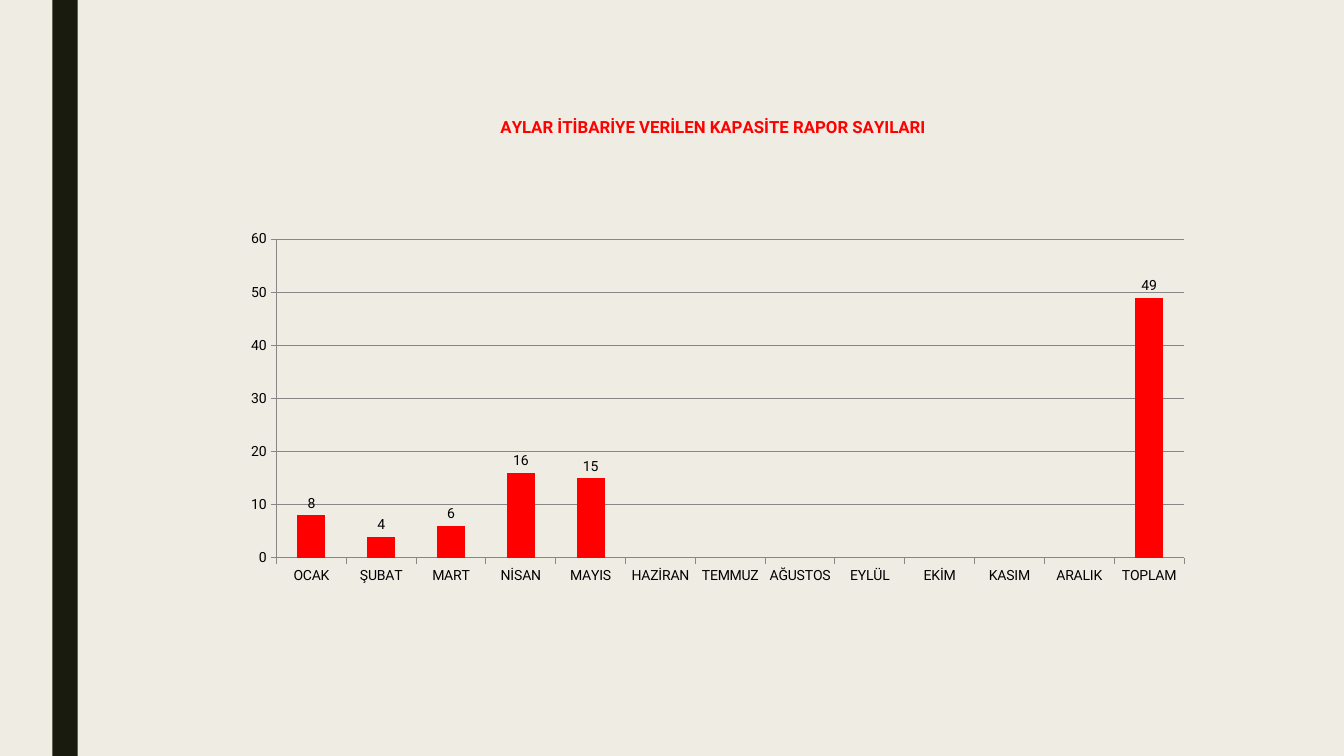
from lxml import etree
from pptx import Presentation
from pptx import util as u
from pptx.chart.data import CategoryChartData
from pptx.dml.color import RGBColor
from pptx.enum import chart as ch, shapes
from pptx.oxml.ns import qn

MONTHS = ["OCAK", "ŞUBAT", "MART", "NİSAN", "MAYIS", "HAZİRAN", "TEMMUZ",
          "AĞUSTOS", "EYLÜL", "EKİM", "KASIM", "ARALIK"]
REPORTS = [8, 4, 6, 16, 15] + [None] * 7
TITLE = "AYLAR İTİBARİYE VERİLEN KAPASİTE RAPOR SAYILARI"


def rgb(value):
    return RGBColor.from_string(value)


def style_font(font, size, color, name="Roboto", bold=False):
    font.name = name
    font.size = u.Pt(size)
    font.bold = bold
    font.color.rgb = rgb(color)


def add_text(p, content, **fmt):
    r = p.add_run()
    r.text = content
    style_font(r.font, **fmt)


def set_layout(parent, **values):
    layout = parent.find(qn("c:layout"))
    if layout is None:
        layout = etree.Element(qn("c:layout"))
        parent.insert(0, layout)
    manual = etree.SubElement(layout, qn("c:manualLayout"))
    for tag, value in values.items():
        etree.SubElement(manual, qn(f"c:{tag}")).set("val", str(value))


class Deck:
    black, red, gray = "000000", "FF0000", "878787"
    background, band = "EFEDE3", "191B0E"

    def __init__(self, prs):
        self.s = prs.slides.add_slide(prs.slide_layouts[6])
        fill = self.s.background.fill
        fill.solid()
        fill.fore_color.rgb = rgb(self.background)

    def add_band(self, x, y, w, h):
        sp = self.s.shapes.add_shape(shapes.MSO_SHAPE.RECTANGLE, *map(u.Inches, (x, y, w, h)))
        sp.shadow.inherit = False
        sp.fill.solid()
        sp.fill.fore_color.rgb = rgb(self.band)
        sp.line.fill.background()

    def add_columns(self, title, categories, values, x, y, w, h):
        data = CategoryChartData()
        data.categories = categories
        data.add_series("Series 1", values)
        chart = self.s.shapes.add_chart(
            ch.XL_CHART_TYPE.COLUMN_CLUSTERED, *map(u.Inches, (x, y, w, h)), data).chart
        style_font(chart.font, size=10, color=self.black)
        chart.has_legend = False
        self.format_title(chart, title)
        self.format_axes(chart)
        self.format_plot(chart)

    def format_title(self, chart, title):
        tf = chart.chart_title.text_frame
        add_text(tf.paragraphs[0], title, size=12, color=self.red, bold=True)
        set_layout(chart.element.find(".//" + qn("c:title")),
                   xMode="edge", yMode="edge", x=0.28, y=0.03)

    def format_axes(self, chart):
        values = chart.value_axis
        values.minimum_scale, values.maximum_scale, values.major_unit = 0, 60, 10
        values.has_major_gridlines = True
        for axis in (chart.category_axis, values):
            axis.major_tick_mark = ch.XL_TICK_MARK.OUTSIDE
            axis.minor_tick_mark = ch.XL_TICK_MARK.NONE
        for part in (chart.category_axis, values, values.major_gridlines):
            part.format.line.color.rgb = rgb(self.gray)
            part.format.line.width = u.Pt(0.75)

    def format_plot(self, chart):
        plot = chart.plots[0]
        plot.gap_width = 150
        plot.vary_by_categories = False
        plot.has_data_labels = True
        labels = plot.data_labels
        labels.show_value = True
        labels.position = ch.XL_LABEL_POSITION.OUTSIDE_END
        style_font(labels.font, size=10, color=self.black)
        fill = plot.series[0].format.fill
        fill.solid()
        fill.fore_color.rgb = rgb(self.red)
        set_layout(chart.element.find(".//" + qn("c:plotArea")), layoutTarget="inner",
                   xMode="edge", yMode="edge", x=0.058, y=0.243, w=0.912, h=0.536)


def main():
    prs = Presentation()
    prs.slide_width, prs.slide_height = u.Inches(13.33), u.Inches(7.5)
    deck = Deck(prs)
    deck.add_band(0.52, 0, 0.25, 7.5)
    deck.add_columns(TITLE, MONTHS + ["TOPLAM"], REPORTS + [sum(filter(None, REPORTS))],
                     2.17, 0.94, 9.87, 5.9)
    prs.save("out.pptx")


if __name__ == "__main__":
    main()
